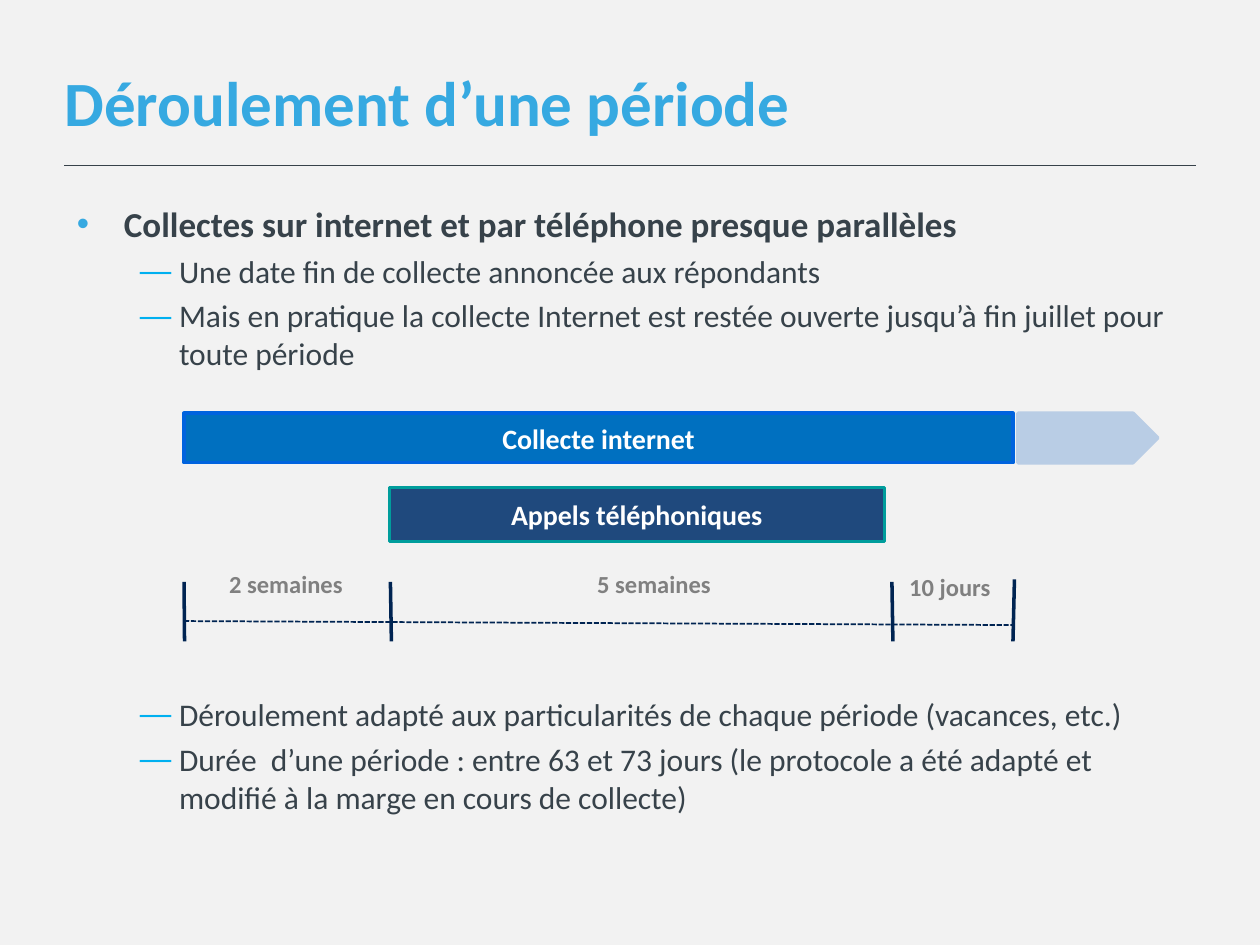
from lxml import etree
from pptx import Presentation
from pptx.dml.color import RGBColor
from pptx.enum.dml import MSO_LINE
from pptx.enum.shapes import MSO_CONNECTOR, MSO_SHAPE
from pptx.enum.text import MSO_ANCHOR, MSO_AUTO_SIZE, PP_ALIGN
from pptx.oxml.ns import qn
from pptx.util import Cm, Pt

STRAIGHT = MSO_CONNECTOR.STRAIGHT
RECT, ARROW = MSO_SHAPE.RECTANGLE, MSO_SHAPE.PENTAGON
MIDDLE, NO_FIT = MSO_ANCHOR.MIDDLE, MSO_AUTO_SIZE.NONE
LEFT, CENTER = PP_ALIGN.LEFT, PP_ALIGN.CENTER
DASH = MSO_LINE.SQUARE_DOT
SKY, SLATE, NAVY = "36A9E1", "37424A", "002452"


def style(para, text, size, color, bold=True):
    para.text = text
    font = para.font
    font.name, font.size, font.bold = "Calibri", Pt(size), bold
    font.color.rgb = RGBColor.from_string(color)


def draw_line(x1, y1, x2, y2, color, width):
    line = slide.shapes.add_connector(STRAIGHT, Cm(x1), Cm(y1), Cm(x2), Cm(y2))
    line.line.color.rgb = RGBColor.from_string(color)
    line.line.width = Pt(width)
    etree.SubElement(line._element.spPr, qn("a:effectLst"))
    return line


deck = Presentation()
deck.slide_width, deck.slide_height = Cm(25.4), Cm(19.05)
slide = deck.slides.add_slide(deck.slide_layouts[5])
slide.background.fill.solid()
slide.background.fill.fore_color.rgb = RGBColor.from_string("F2F2F2")

# Title and rule
title = slide.shapes.title
title.left, title.top, title.width, title.height = Cm(1.3), Cm(0.76), Cm(21), Cm(2.57)
frame = title.text_frame
frame.margin_left, frame.vertical_anchor, frame.auto_size = 0, MIDDLE, NO_FIT
style(frame.paragraphs[0], "Déroulement d’une période", 36, SKY)
frame.paragraphs[0].alignment = LEFT
draw_line(1.3, 3.33, 24.1, 3.33, SLATE, 0.5)

# Bullets above and below the diagram; level 0 is the heading
levels = [("•", SKY, 0.95, -0.95, 20, True), ("—", "00B0F0", 2.06, -0.79, 18, False)]
blocks = [
    (3.96, 3.8, [
        (0, "Collectes sur internet et par téléphone presque parallèles"),
        (1, "Une date fin de collecte annoncée aux répondants"),
        (1, "Mais en pratique la collecte Internet est restée ouverte "
            "jusqu’à fin juillet pour toute période")]),
    (13.89, 2.7, [
        (1, "Déroulement adapté aux particularités de chaque période (vacances, etc.)"),
        (1, "Durée  d’une période : entre 63 et 73 jours (le protocole a été "
            "adapté et modifié à la marge en cours de collecte)")]),
]
for top, height, items in blocks:
    frame = slide.shapes.add_textbox(Cm(1.3), Cm(top), Cm(22.8), Cm(height)).text_frame
    frame.word_wrap = True
    for i, (level, text) in enumerate(items):
        mark, tint, margin, indent, size, bold = levels[level]
        para = frame.add_paragraph() if i else frame.paragraphs[0]
        if i:
            para.space_before = Pt(4)
        props = para._p.get_or_add_pPr()
        props.set("marL", str(Cm(margin)))
        props.set("indent", str(Cm(indent)))
        color = etree.SubElement(props, qn("a:buClr"))
        etree.SubElement(color, qn("a:srgbClr"), val=tint)
        etree.SubElement(props, qn("a:buFont"), typeface="Arial")
        etree.SubElement(props, qn("a:buChar"), char=mark)
        style(para, text, size, SLATE, bold)

# Collection bars
bars = [
    (RECT, 3.71, 8.33, 16.71, 1, "0070C0", "0063DE", "Collecte internet"),
    (RECT, 7.85, 9.83, 9.98, 1.09, "1F497D", "009D9C", "Appels téléphoniques"),
    (ARROW, 20.52, 8.33, 2.82, 1, "B9CDE5", "B9CDE5", ""),
]
for kind, x, y, width, height, fill, edge, text in bars:
    bar = slide.shapes.add_shape(kind, Cm(x), Cm(y), Cm(width), Cm(height))
    bar.shadow.inherit = False
    bar.fill.solid()
    bar.fill.fore_color.rgb = RGBColor.from_string(fill)
    bar.line.color.rgb = RGBColor.from_string(edge)
    bar.line.width = Pt(2)
    if text:
        bar.text_frame.vertical_anchor = MIDDLE
        style(bar.text_frame.paragraphs[0], text, 16, "FFFFFF")
        bar.text_frame.paragraphs[0].alignment = CENTER

# Time scale
draw_line(3.71, 12.52, 20.42, 12.6, NAVY, 1).line.dash_style = DASH
ticks = [(3.71, 3.72, 11.73), (7.87, 7.89, 11.73), (17.98, 18, 11.73), (20.45, 20.42, 11.68)]
for start, end, top in ticks:
    draw_line(start, top, end, 12.93, NAVY, 0)

spans = [(4.37, 11.35, 3, "2 semaines"), (11.79, 11.35, 3.96, "5 semaines"),
         (18.08, 11.4, 2.31, "10 jours")]
for x, y, width, text in spans:
    frame = slide.shapes.add_textbox(Cm(x), Cm(y), Cm(width), Cm(0.84)).text_frame
    frame.word_wrap = True
    style(frame.paragraphs[0], text, 14, "808080")

deck.save("out.pptx")
